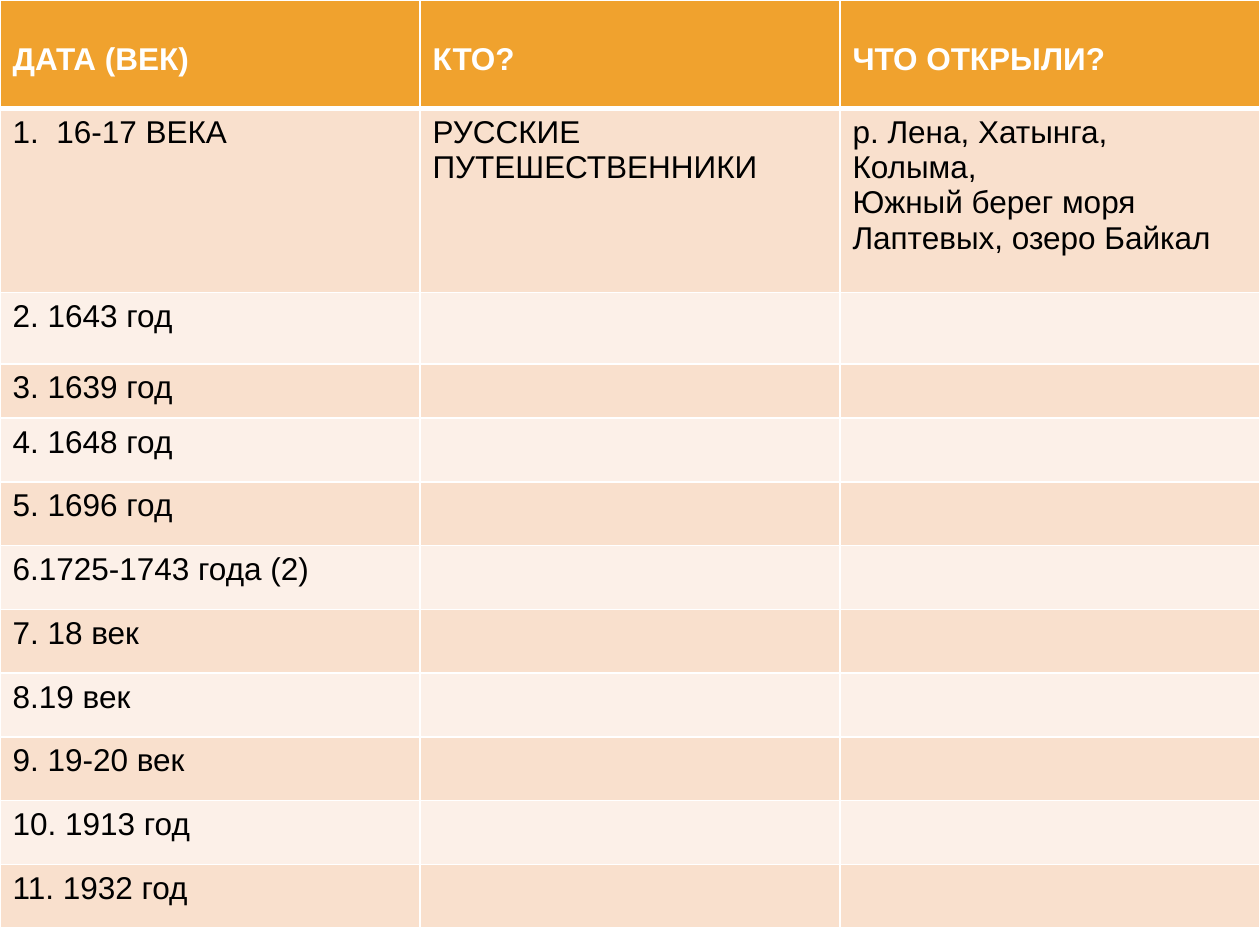
from dataclasses import dataclass

from lxml import etree
from pptx import Presentation
from pptx.dml.color import RGBColor
from pptx.oxml.ns import qn
from pptx.util import Inches, Pt

BLANK_LAYOUT = 6


@dataclass(frozen=True)
class Theme:
    font: str = "Arial"
    size: int = 18
    header_fill: str = "F0A22E"
    band_fills: tuple = ("F9E0CD", "FCF0E8")
    header_text: str = "FFFFFF"
    body_text: str = "000000"
    border: str = "FFFFFF"
    thin: int = 1
    thick: int = 3


THEME = Theme()

HEADERS = ["ДАТА (ВЕК)", "КТО?", "ЧТО ОТКРЫЛИ?"]
FIRST_ENTRY = [
    "1.  16-17 ВЕКА",
    "РУССКИЕ ПУТЕШЕСТВЕННИКИ",
    "р. Лена, Хатынга,\nКолыма,\nЮжный берег моря Лаптевых, озеро Байкал",
]
DATES = [
    "2. 1643 год", "3. 1639 год", "4. 1648 год", "5. 1696 год",
    "6.1725-1743 года (2)", "7. 18 век", "8.19 век", "9. 19-20 век",
    "10. 1913 год", "11. 1932 год",
]
ROWS = [HEADERS, FIRST_ENTRY] + [[date, "", ""] for date in DATES]

TABLE_WIDTH, TABLE_HEIGHT = 10, 7.37
TOP_ROW_HEIGHTS = [0.86, 1.46, 0.57, 0.43]
HEADER_TOP_MARGIN = 0.33


def row_heights():
    """The first rows have their own heights; the others share the rest."""
    others = len(ROWS) - len(TOP_ROW_HEIGHTS)
    shared = (TABLE_HEIGHT - sum(TOP_ROW_HEIGHTS)) / others
    return TOP_ROW_HEIGHTS + [shared] * others


def set_borders(cell, widths):
    properties = cell._tc.get_or_add_tcPr()
    for side, width in widths.items():
        line = etree.SubElement(properties, qn(f"a:ln{side}"), w=str(Pt(width)))
        fill = etree.SubElement(line, qn("a:solidFill"))
        etree.SubElement(fill, qn("a:srgbClr"), val=THEME.border)


def format_cell(cell, text, fill, color, bold):
    cell.fill.solid()
    cell.fill.fore_color.rgb = RGBColor.from_string(fill)
    cell.text = text
    font_format = {"name": THEME.font, "size": Pt(THEME.size), "bold": bold}
    for para in cell.text_frame.paragraphs:
        for name, value in font_format.items():
            setattr(para.font, name, value)
        para.font.color.rgb = RGBColor.from_string(color)


def fill_row(table, index, texts):
    is_header = index == 0
    widths = dict.fromkeys("LRTB", THEME.thin)
    if is_header:
        widths["B"] = THEME.thick
        fill, color = THEME.header_fill, THEME.header_text
    else:
        if index == 1:
            widths["T"] = THEME.thick
        fill, color = THEME.band_fills[(index - 1) % 2], THEME.body_text
    for column, text in enumerate(texts):
        cell = table.cell(index, column)
        set_borders(cell, widths)
        format_cell(cell, text, fill, color, is_header)
        if is_header:
            cell.margin_top = Inches(HEADER_TOP_MARGIN)


def add_discoveries_table(page):
    frame = page.shapes.add_table(
        len(ROWS), len(HEADERS), 0, 0, Inches(TABLE_WIDTH), Inches(TABLE_HEIGHT))
    table = frame.table
    for row, height in zip(table.rows, row_heights()):
        row.height = Inches(height)
    for index, texts in enumerate(ROWS):
        fill_row(table, index, texts)


def main():
    deck = Presentation()
    deck.slide_width, deck.slide_height = Inches(10), Inches(7.5)
    page = deck.slides.add_slide(deck.slide_layouts[BLANK_LAYOUT])
    add_discoveries_table(page)
    deck.save("out.pptx")


if __name__ == "__main__":
    main()
